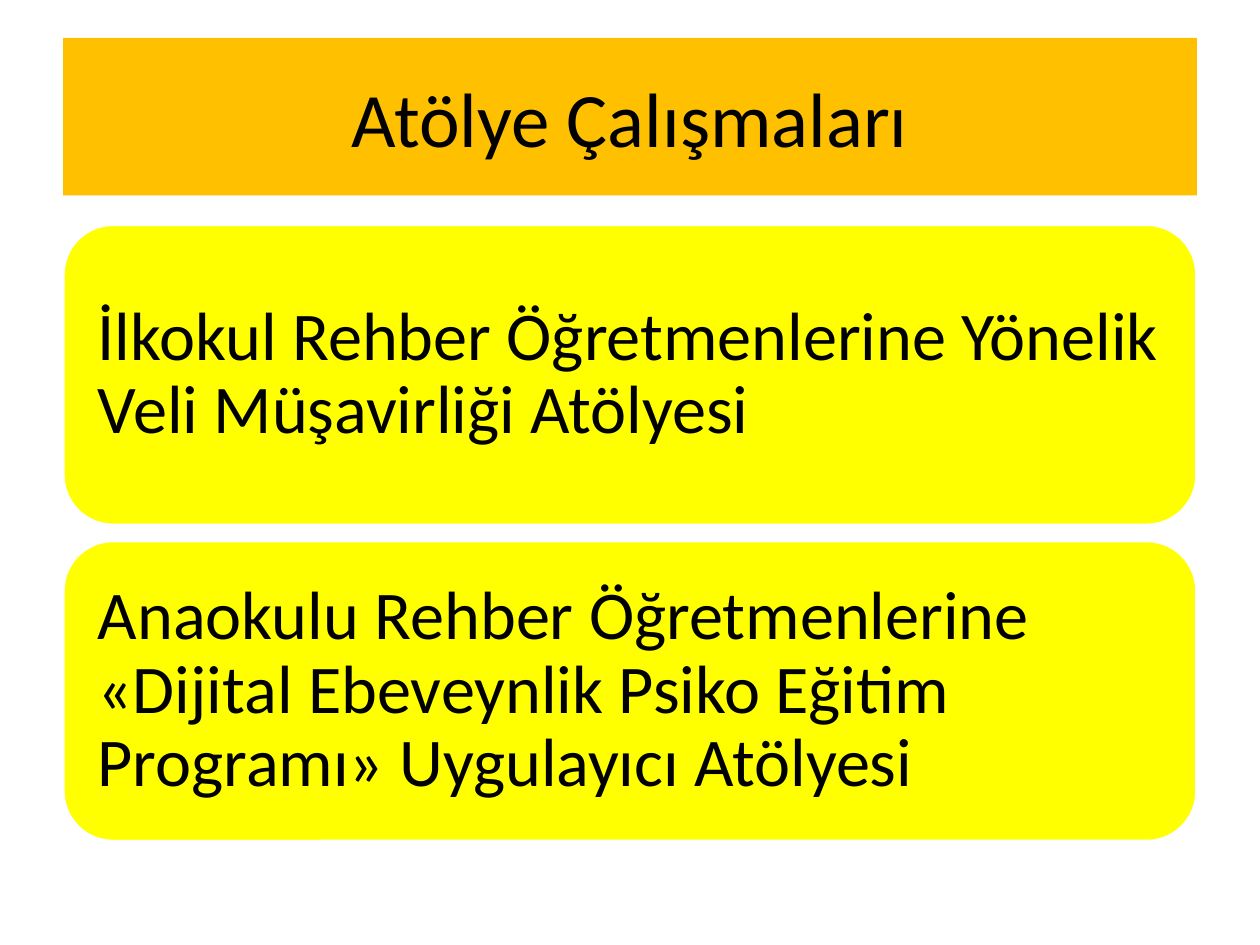
from pptx import Presentation
from pptx.dml.color import RGBColor
from pptx.enum.shapes import MSO_SHAPE
from pptx.enum.text import MSO_ANCHOR, PP_ALIGN
from pptx.util import Pt

ROUND = MSO_SHAPE.ROUNDED_RECTANGLE
MIDDLE = MSO_ANCHOR.MIDDLE
LEFT, CENTER = PP_ALIGN.LEFT, PP_ALIGN.CENTER

COLORS = {"title": "FFC000", "card": "FFFF00", "edge": "FFFFFF", "text": "000000"}
FONT = "Calibri"
X, WIDTH = 36, 648
TOP, HEIGHT, GAP = 128.2, 172, 8.7

WORKSHOPS = [
    "İlkokul Rehber Öğretmenlerine Yönelik Veli Müşavirliği Atölyesi",
    "Anaokulu Rehber Öğretmenlerine «Dijital Ebeveynlik Psiko Eğitim "
    "Programı» Uygulayıcı Atölyesi",
]


class Deck:
    def __init__(self):
        self.prs = Presentation()
        self.prs.slide_width, self.prs.slide_height = Pt(720), Pt(540)
        self.slide = self.prs.slides.add_slide(self.prs.slide_layouts[5])

    def paint(self, part, name):
        part.solid()
        part.fore_color.rgb = RGBColor.from_string(COLORS[name])

    def label(self, shape, text, size, align):
        """Put one styled paragraph in a shape; return its frame and paragraph."""
        frame = shape.text_frame
        frame.word_wrap = True
        frame.vertical_anchor = MIDDLE
        para = frame.paragraphs[0]
        para.alignment = align
        run = para.add_run()
        run.text = text
        run.font.name = FONT
        run.font.size = Pt(size)
        self.paint(run.font.fill, "text")
        return frame, para

    def title(self, text):
        shape = self.slide.shapes.title
        shape.left, shape.top = Pt(X), Pt(21.6)
        shape.width, shape.height = Pt(WIDTH), Pt(90)
        self.paint(shape.fill, "title")
        self.label(shape, text, 44, CENTER)

    def card(self, top, text):
        shape = self.slide.shapes.add_shape(
            ROUND, Pt(X), Pt(top), Pt(WIDTH), Pt(HEIGHT))
        shape.shadow.inherit = False
        self.paint(shape.fill, "card")
        self.paint(shape.line.fill, "edge")
        shape.line.width = Pt(2)
        frame, para = self.label(shape, text, 39, LEFT)
        para.line_spacing = 0.9
        frame.margin_left = frame.margin_right = Pt(11.5)
        frame.margin_top = frame.margin_bottom = Pt(11.5)


def main():
    deck = Deck()
    deck.title("Atölye Çalışmaları")
    for i, text in enumerate(WORKSHOPS):
        deck.card(TOP + i * (HEIGHT + GAP), text)
    deck.prs.save("out.pptx")


if __name__ == "__main__":
    main()
